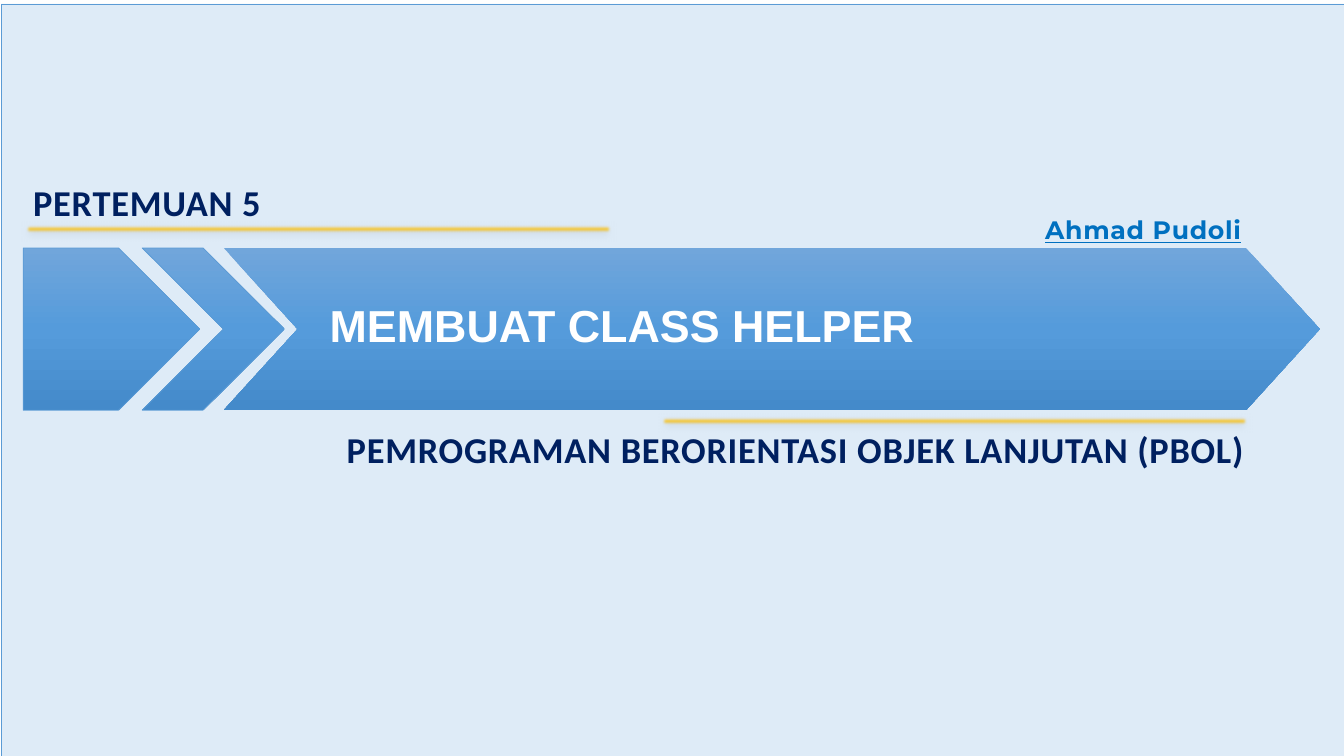
from copy import deepcopy

from lxml.etree import SubElement
from pptx import Presentation
from pptx.dml.color import RGBColor
from pptx.enum.shapes import MSO_SHAPE
from pptx.enum.text import MSO_ANCHOR, MSO_AUTO_SIZE, PP_ALIGN
from pptx.oxml.ns import qn
from pptx.util import Inches, Pt

PALE_BLUE = RGBColor(0xDE, 0xEB, 0xF7)
BLUE = RGBColor(0x5B, 0x9B, 0xD5)
LINK_BLUE = RGBColor(0x00, 0x70, 0xC0)
NAVY = RGBColor(0x00, 0x20, 0x60)
WHITE = RGBColor(0xFF, 0xFF, 0xFF)
BLUE_FADE = (RGBColor(0x71, 0xA6, 0xDB), RGBColor(0x55, 0x9B, 0xDB), RGBColor(0x44, 0x8A, 0xCA))
GOLD_FADE = (RGBColor(0xFF, 0xC6, 0x4B), RGBColor(0xFF, 0xC0, 0x00), RGBColor(0xE3, 0xAB, 0x00))

BAND_TOP, BAND_HEIGHT = 32.8, 21.47
LABEL_HEIGHT = 4.8


class CoverSlide:
    """Draws cover elements placed by percentages of the slide's size."""

    def __init__(self, deck):
        self.deck = deck
        self.page = deck.slides.add_slide(deck.slide_layouts[0])

    def place(self, left, top, width, height):
        """Turn percentages into slide lengths."""
        across, down = self.deck.slide_width / 100, self.deck.slide_height / 100
        return round(left * across), round(top * down), round(width * across), round(height * down)

    def shape(self, kind, area, colors, outlined=False, point=None):
        """Add a preset shape with a plain fill or a vertical fade."""
        shape = self.page.shapes.add_shape(kind, *self.place(*area))
        shape.shadow.inherit = False
        if point is not None:
            shape.adjustments[0] = point
        if len(colors) == 1:
            shape.fill.solid()
            shape.fill.fore_color.rgb = colors[0]
        else:
            self.fade(shape, colors)
        if outlined:
            shape.line.color.rgb = BLUE
            shape.line.width = Pt(0.5)
        else:
            shape.line.fill.background()
        return shape

    def fade(self, shape, colors):
        """Fill a shape from top to bottom with three evenly spaced colours."""
        shape.fill.gradient()
        shape.fill.gradient_angle = 270
        stop_list = next(shape.element.iter(qn("a:gsLst")))
        stop_list.append(deepcopy(stop_list[-1]))
        for index, (stop, color) in enumerate(zip(shape.fill.gradient_stops, colors)):
            stop.position = index / 2
            stop.color.rgb = color

    def rule(self, left, top):
        """Add a soft gold rule with a shadow below it."""
        bar = self.shape(MSO_SHAPE.RECTANGLE, (left, top, 43.59, 1.2), GOLD_FADE)
        effects = bar.element.spPr.find(qn("a:effectLst"))
        shadow = SubElement(effects, qn("a:outerShdw"), blurRad=str(Pt(4.5)), dist=str(Pt(1.5)),
                            dir="5400000", algn="ctr", rotWithShape="0")
        black = SubElement(shadow, qn("a:srgbClr"), val="000000")
        SubElement(black, qn("a:alpha"), val="63000")
        SubElement(effects, qn("a:softEdge"), rad=str(Pt(2.5)))

    def label(self, area, text, size, font, color, align=PP_ALIGN.LEFT,
              spacing=0, underline=False, box=None):
        """Write bold text in a placeholder or in a new text box."""
        if box is None:
            box = self.page.shapes.add_textbox(*self.place(*area))
        else:
            box.left, box.top, box.width, box.height = self.place(*area)
            box.element.getparent().append(box.element)
        frame = box.text_frame
        frame.word_wrap = True
        frame.auto_size = MSO_AUTO_SIZE.NONE
        frame.vertical_anchor = MSO_ANCHOR.MIDDLE
        para = frame.paragraphs[0]
        para.text = text
        para.alignment = align
        para.space_before = Pt(0)
        para.font.name = font
        para.font.size = Pt(size)
        para.font.bold = True
        para.font.underline = underline
        para.font.color.rgb = color
        next(box.element.iter(qn("a:defRPr"))).set("spc", str(round(spacing * 100)))


def main():
    """Build the cover slide and save it."""
    deck = Presentation()
    deck.slide_width, deck.slide_height = Inches(13.33), Inches(7.5)
    cover = CoverSlide(deck)
    title, subtitle = cover.page.placeholders

    cover.shape(MSO_SHAPE.RECTANGLE, (0.08, 0.53, 100, 100), (PALE_BLUE,), outlined=True)
    for kind, left, width, outlined, point in (
        (MSO_SHAPE.PENTAGON, 1.73, 13.13, True, 0.5),
        (MSO_SHAPE.CHEVRON, 10.58, 10.58, True, 0.572),
        (MSO_SHAPE.CHEVRON, 16.65, 81.55, False, 0.455),
    ):
        cover.shape(kind, (left, BAND_TOP, width, BAND_HEIGHT), BLUE_FADE, outlined, point)

    cover.label((1.73, 24.27, 35.03, LABEL_HEIGHT), "PERTEMUAN 5", 26, "Calibri", NAVY, spacing=0.5)
    cover.rule(1.88, 29.73)
    cover.rule(49.21, 55.07)
    cover.label((14.93, 56.93, 78.47, LABEL_HEIGHT),
                "PEMROGRAMAN BERORIENTASI OBJEK LANJUTAN (PBOL)", 26, "Calibri", NAVY,
                PP_ALIGN.RIGHT, spacing=0.5, box=subtitle)
    cover.label((23.78, 35.33, 70.74, 15.2), "MEMBUAT CLASS HELPER", 32, "Arial", WHITE, box=title)
    cover.label((66.92, 28, 26.18, LABEL_HEIGHT), "Ahmad Pudoli", 18, "Montserrat", LINK_BLUE,
                PP_ALIGN.RIGHT, spacing=0.5, underline=True)
    deck.save("out.pptx")


if __name__ == "__main__":
    main()
